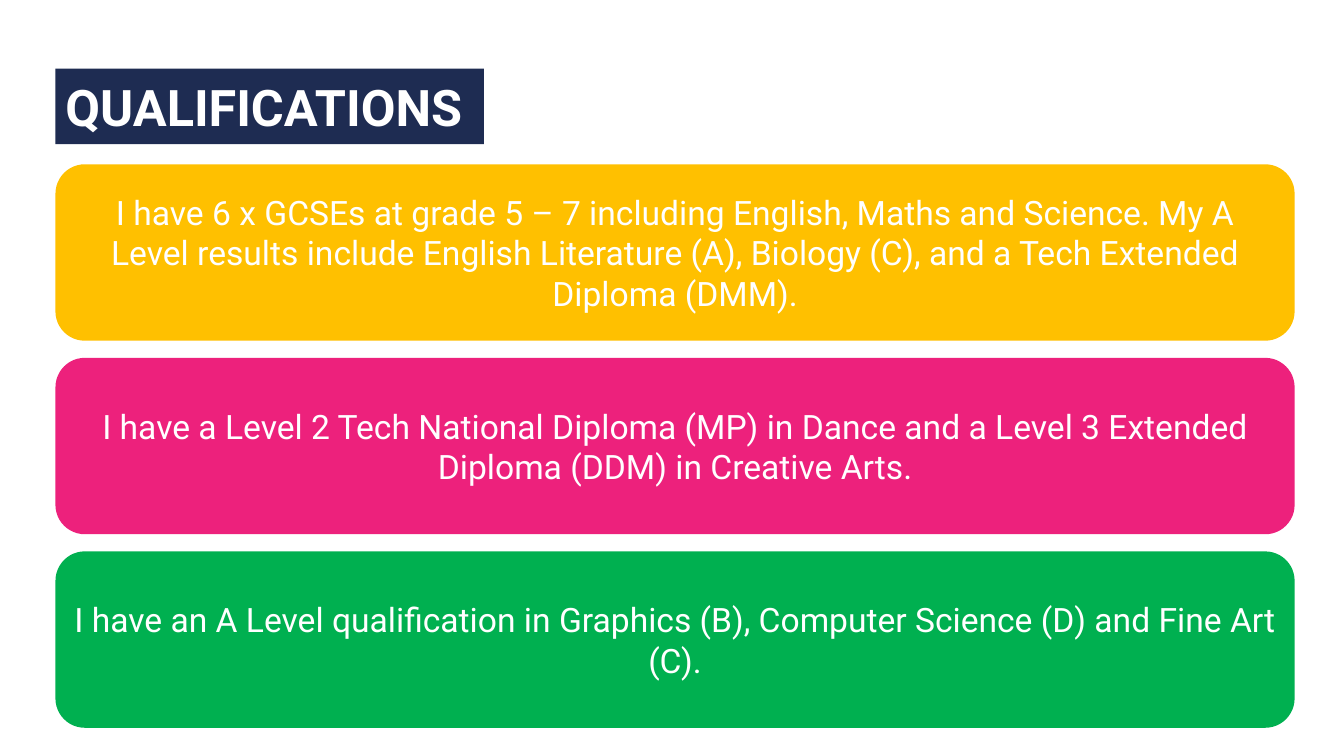
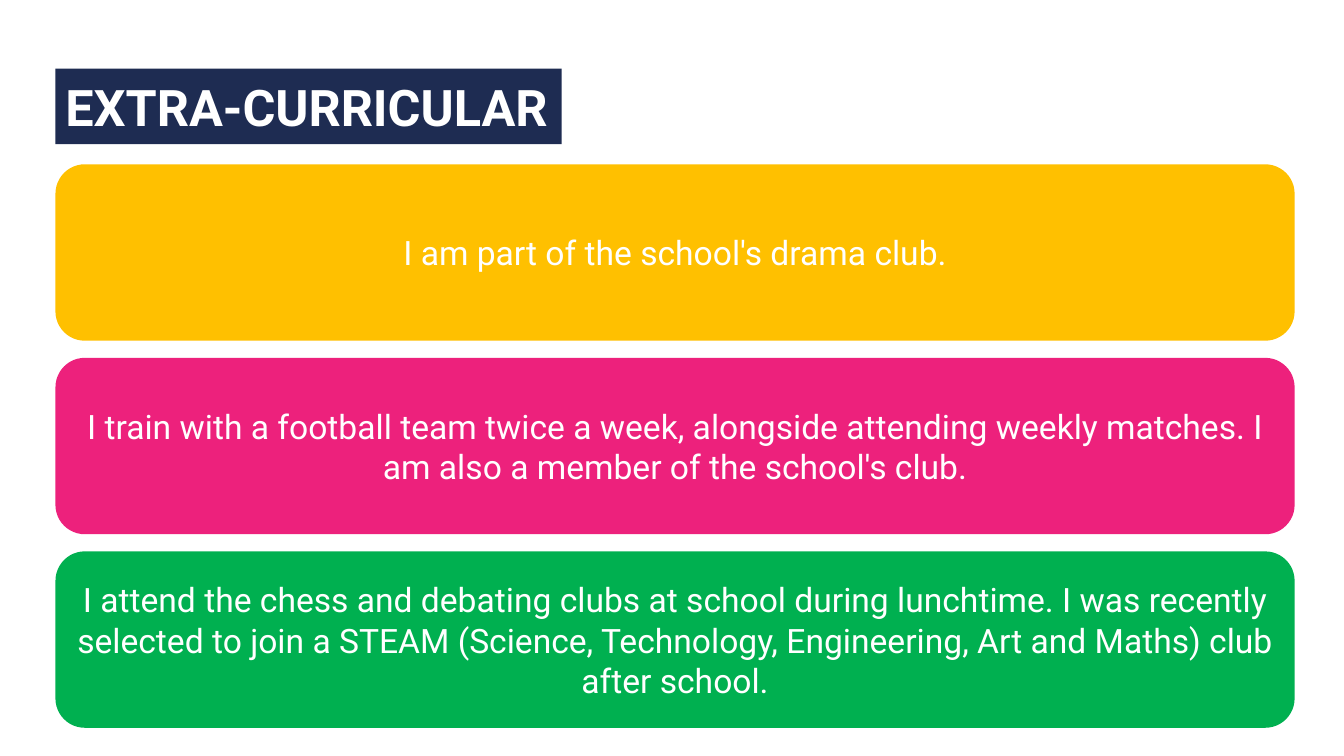
"""Build two profile slides, each a title band above three coloured panels."""
from pptx import Presentation
from pptx.dml.color import RGBColor
from pptx.enum.shapes import MSO_SHAPE as SHAPE
from pptx.enum.text import MSO_ANCHOR as ANCHOR, PP_ALIGN as ALIGN
from pptx.util import Emu, Pt

SLIDES = [
    ("QUALIFICATIONS", 425, [
        "I have 6 x GCSEs at grade 5 – 7 including English, Maths and Science. My A Level "
        "results include English Literature (A), Biology (C), and a Tech Extended Diploma (DMM).",
        "I have a Level 2 Tech National Diploma (MP) in Dance and a Level 3 Extended "
        "Diploma (DDM) in Creative Arts.",
        "I have an A Level qualification in Graphics (B), Computer Science (D) and Fine Art (C).",
    ]),
    ("EXTRA-CURRICULAR", 502, [
        "I am part of the school's drama club.",
        "I train with a football team twice a week, alongside attending weekly matches. "
        "I am also a member of the school's club.",
        "I attend the chess and debating clubs at school during lunchtime. I was recently "
        "selected to join a STEAM (Science, Technology, Engineering, Art and Maths) club "
        "after school.",
    ]),
]
FONT = "Roboto"
NAVY, WHITE = "1E2C52", "FFFFFF"
PANEL_COLOURS = ["FFC000", "ED217C", "00B050"]
SLIDE_W, SLIDE_H = 1333, 750
LEFT = 55
TITLE_TOP, TITLE_H = 68, 75
PANEL_TOP, PANEL_W, PANEL_H, PANEL_GAP = 163, 1229, 175, 17


def px(n):
    return Emu(n * 9144)


def rgb(colour):
    return RGBColor.from_string(colour)


def add_text(tf, text, size, bold=False, align=ALIGN.CENTER, colour=WHITE):
    tf.word_wrap = True
    tf.vertical_anchor = ANCHOR.MIDDLE
    p = tf.paragraphs[0]
    p.alignment = align
    r = p.add_run()
    r.text = text
    r.font.name, r.font.size, r.font.bold = FONT, Pt(size), bold
    r.font.color.rgb = rgb(colour)


def add_box(s, shape, top, width, height, fill, text, **text_format):
    sp = s.shapes.add_shape(shape, px(LEFT), px(top), px(width), px(height))
    sp.shadow.inherit = False
    sp.fill.solid()
    sp.fill.fore_color.rgb = rgb(fill)
    sp.line.fill.background()
    add_text(sp.text_frame, text, **text_format)


def add_slide(prs, title, title_w, panels):
    s = prs.slides.add_slide(prs.slide_layouts[6])
    add_box(s, SHAPE.RECTANGLE, TITLE_TOP, title_w, TITLE_H, NAVY, title,
            size=36, bold=True, align=ALIGN.LEFT)
    for i, (colour, text) in enumerate(zip(PANEL_COLOURS, panels)):
        top = PANEL_TOP + i * (PANEL_H + PANEL_GAP)
        add_box(s, SHAPE.ROUNDED_RECTANGLE, top, PANEL_W, PANEL_H, colour, text, size=24)


def main():
    prs = Presentation()
    prs.slide_width, prs.slide_height = px(SLIDE_W), px(SLIDE_H)
    for title, title_w, panels in SLIDES:
        add_slide(prs, title, title_w, panels)
    prs.save("out.pptx")


if __name__ == "__main__":
    main()
